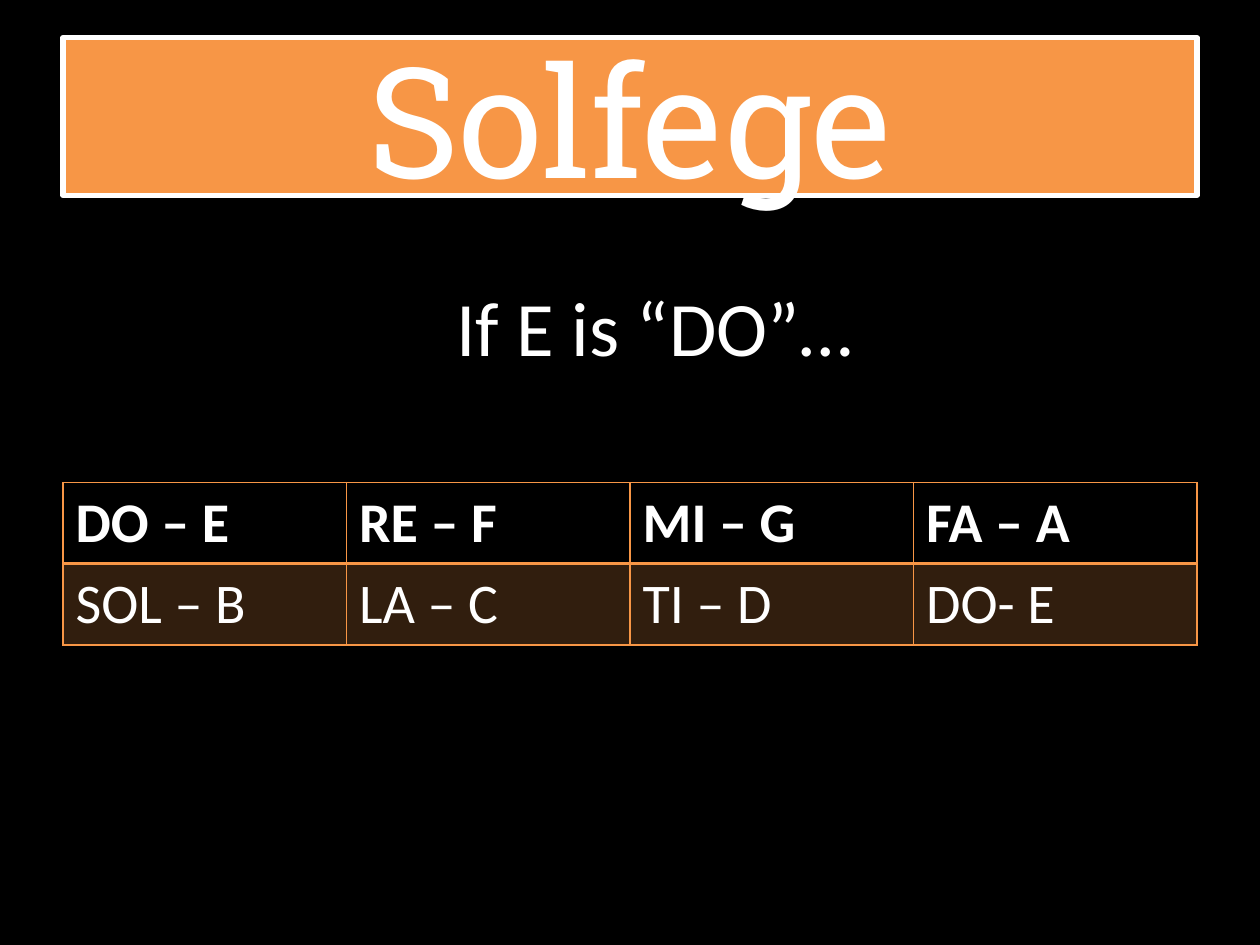
import lxml.etree
import pptx
import pptx.dml.color
import pptx.enum.shapes
import pptx.enum.text
import pptx.oxml.ns
import pptx.util
from pptx.util import Inches

CENTER = pptx.enum.text.PP_ALIGN.CENTER
MIDDLE = pptx.enum.text.MSO_ANCHOR.MIDDLE
qn = pptx.oxml.ns.qn


def color(hex_value):
    return pptx.dml.color.RGBColor.from_string(hex_value)


def write(frame, text, font="Calibri", size=32, ink="FFFFFF", bold=False, align=None):
    paragraph = frame.paragraphs[0]
    paragraph.alignment = align
    run = paragraph.add_run()
    run.text = text
    run.font.name = font
    run.font.size = pptx.util.Pt(size)
    run.font.bold = bold
    run.font.color.rgb = color(ink)


class SolfegeSlide:
    black, white, orange = "000000", "FFFFFF", "F79646"

    def __init__(self, presentation):
        self.slide = presentation.slides.add_slide(presentation.slide_layouts[6])
        self.slide.background.fill.solid()
        self.slide.background.fill.fore_color.rgb = color(self.black)

    def banner(self, text, left, top, width, height):
        box = self.slide.shapes.add_shape(
            pptx.enum.shapes.MSO_SHAPE.RECTANGLE,
            Inches(left), Inches(top), Inches(width), Inches(height))
        box.shadow.inherit = False
        box.fill.solid()
        box.fill.fore_color.rgb = color(self.orange)
        box.line.color.rgb = color(self.white)
        box.line.width = pptx.util.Pt(3)
        box.text_frame.word_wrap = True
        box.text_frame.vertical_anchor = MIDDLE
        write(box.text_frame, text, font="Roboto Slab", size=88, align=CENTER)

    def prompt(self, text, left, top, width, height):
        box = self.slide.shapes.add_textbox(
            Inches(left), Inches(top), Inches(width), Inches(height))
        box.text_frame.word_wrap = True
        write(box.text_frame, text, size=44, align=CENTER)

    def border(self, cell, side, points):
        """Draw one side of a cell: L, R, T or B, called in that order."""
        line = lxml.etree.SubElement(
            cell._tc.get_or_add_tcPr(), qn(f"a:ln{side}"), w=str(pptx.util.Pt(points)))
        fill = lxml.etree.SubElement(line, qn("a:solidFill"))
        lxml.etree.SubElement(fill, qn("a:srgbClr"), val=self.orange)

    def tint(self, cell, percent):
        """Fill a cell with see-through orange."""
        cell.fill.solid()
        cell.fill.fore_color.rgb = color(self.orange)
        shade = cell._tc.tcPr.find(qn("a:solidFill")).find(qn("a:srgbClr"))
        lxml.etree.SubElement(shade, qn("a:alpha"), val=str(percent * 1000))

    def note_table(self, rows, left, top, width, row_height):
        table = self.slide.shapes.add_table(
            len(rows), len(rows[0]), Inches(left), Inches(top),
            Inches(width), Inches(row_height * len(rows))).table
        for row_index, notes in enumerate(rows):
            is_header = row_index == 0
            weights = {"L": 1, "R": 1, "T": 1 if is_header else 2,
                       "B": 2 if is_header else 1}
            for column_index, note in enumerate(notes):
                cell = table.cell(row_index, column_index)
                write(cell.text_frame, note, bold=is_header)
                for side, points in weights.items():
                    self.border(cell, side, points)
                if is_header:
                    cell.fill.background()
                else:
                    self.tint(cell, 20)


def main():
    presentation = pptx.Presentation()
    presentation.slide_width = Inches(10)
    presentation.slide_height = Inches(7.5)
    solfege = SolfegeSlide(presentation)
    solfege.note_table(
        [["DO – E", "RE – F", "MI – G", "FA – A"],
         ["SOL – B", "LA – C", "TI – D", "DO- E"]],
        0.5, 3.83, 9, 0.64)
    solfege.banner("Solfege", 0.5, 0.3, 9, 1.25)
    solfege.prompt("If E is “DO”…", 1.95, 2.17, 6.5, 0.84)
    presentation.save("out.pptx")


if __name__ == "__main__":
    main()
